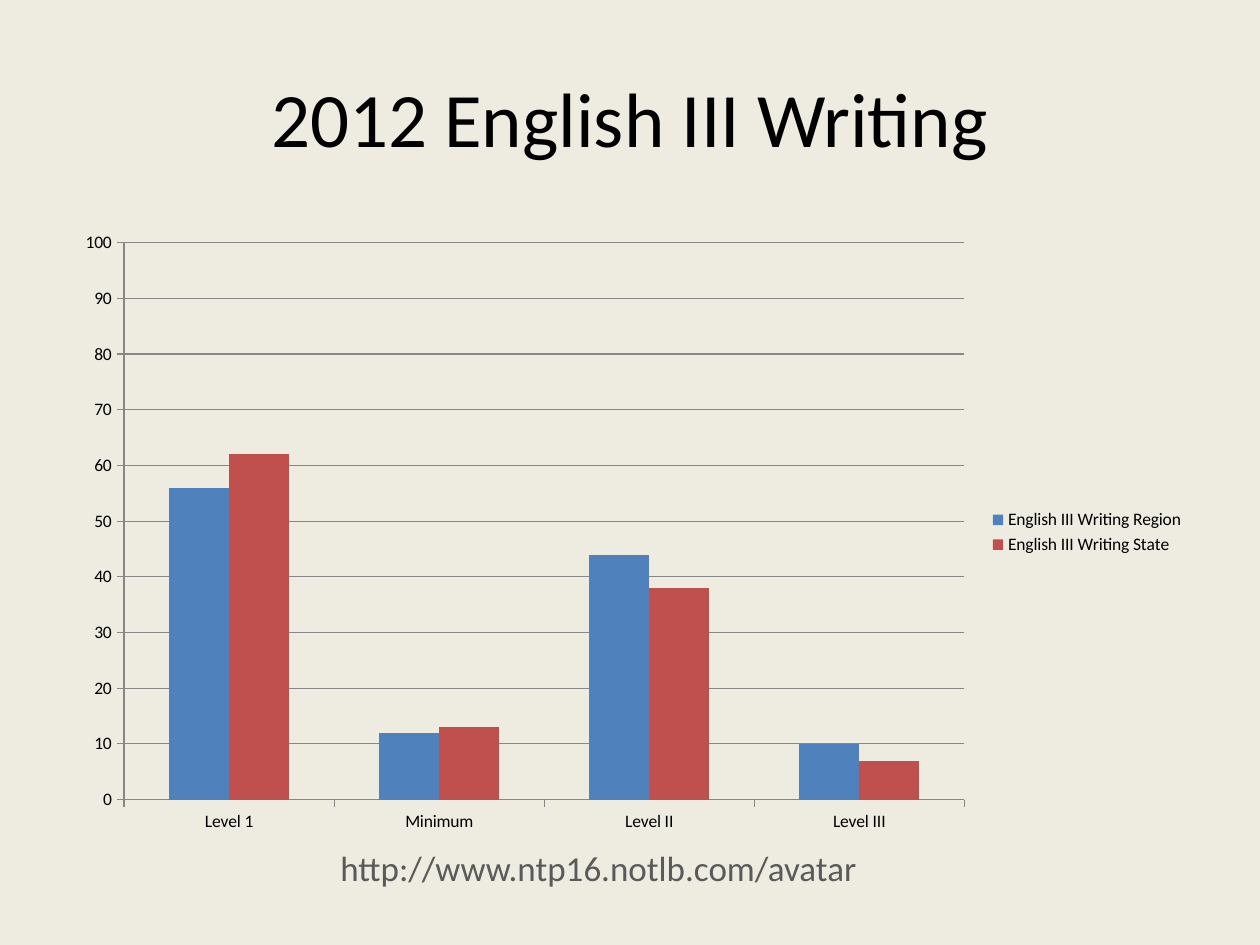
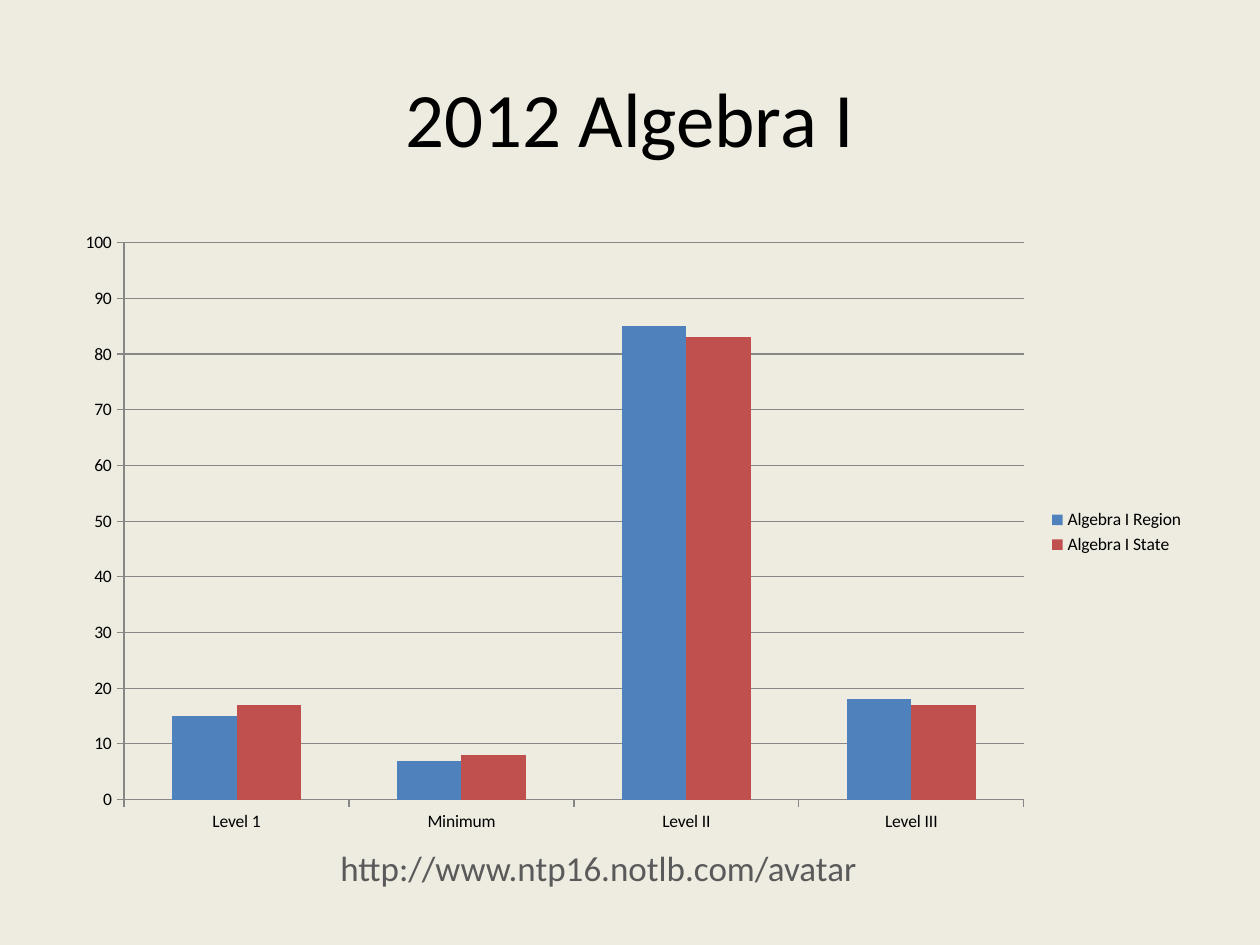
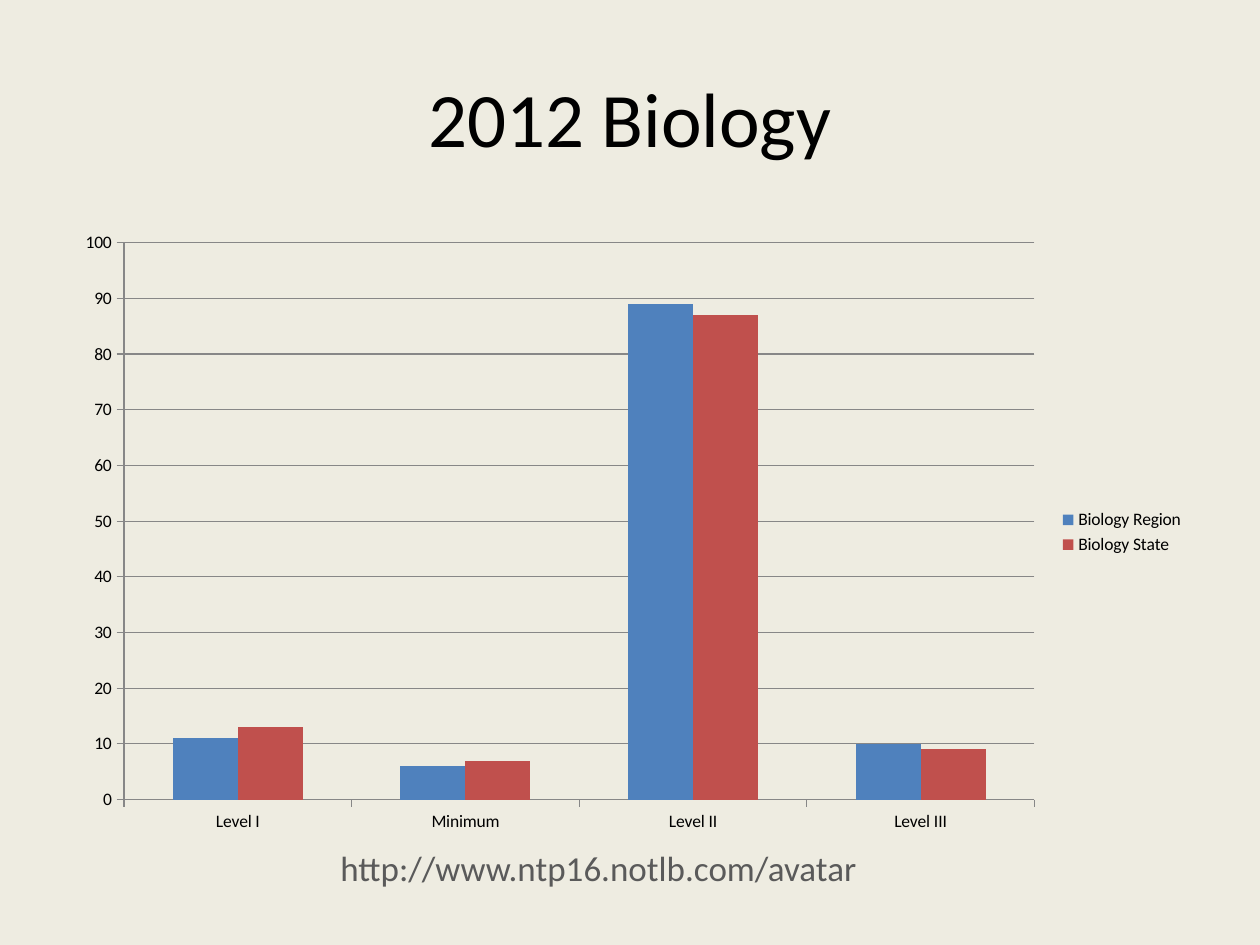
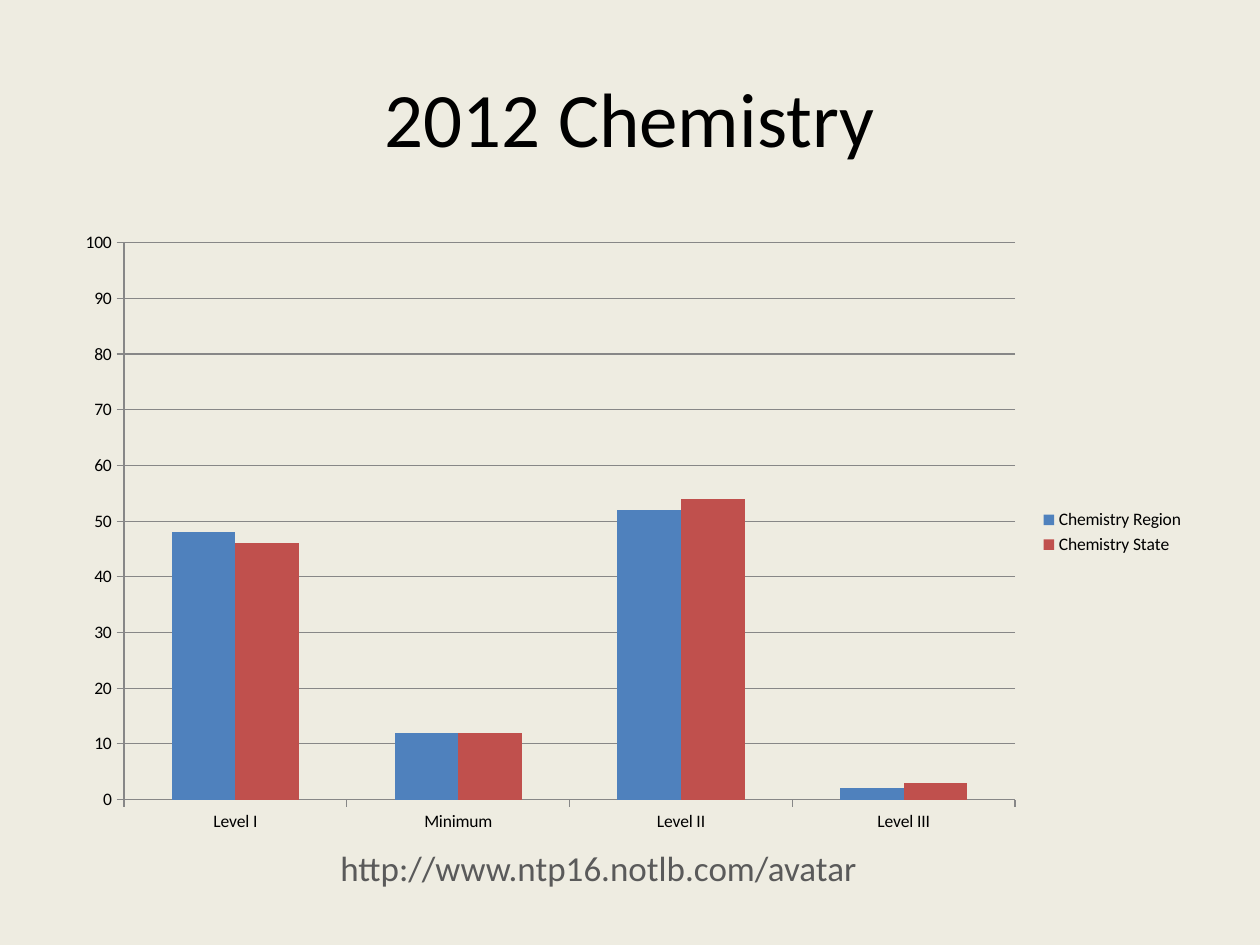
"""Build four column-chart slides of 2012 exam results, region against state."""
import pptx
import pptx.chart.data
import pptx.dml.color
import pptx.enum.chart
import pptx.enum.text
import pptx.util

Inches = pptx.util.Inches
FONT = "Calibri"
COLORS = {
    "background": "EEECE1",
    "text": "000000",
    "footer": "5A5A5A",
    "axis": "878787",
    "Region": "4F81BD",
    "State": "C0504D",
}
FOOTER = "http://www.ntp16.notlb.com/avatar"
LATER_LEVELS = ["Minimum", "Level II", "Level III"]
RESULTS = [
    ("English III Writing", "Level 1", [56, 12, 44, 10], [62, 13, 38, 7]),
    ("Algebra I", "Level 1", [15, 7, 85, 18], [17, 8, 83, 17]),
    ("Biology", "Level I", [11, 6, 89, 10], [13, 7, 87, 9]),
    ("Chemistry", "Level I", [48, 12, 52, 2], [46, 12, 54, 3]),
]


def rgb(name):
    return pptx.dml.color.RGBColor.from_string(COLORS[name])


def style_font(font, size, color):
    font.name = FONT
    font.size = pptx.util.Pt(size)
    font.color.rgb = rgb(color)


def write_line(frame, text, size, color):
    frame.word_wrap = True
    para = frame.paragraphs[0]
    para.alignment = pptx.enum.text.PP_ALIGN.CENTER
    span = para.add_run()
    span.text = text
    style_font(span.font, size, color)


def prepare_master(deck, layout):
    fill = deck.slide_master.background.fill
    fill.solid()
    fill.fore_color.rgb = rgb("background")
    for holder in list(layout.placeholders):
        if holder.placeholder_format.idx != 0:
            layout.shapes.element.remove(holder.element)


def move_footer_to_layout(slide, layout):
    box = slide.shapes.add_textbox(Inches(1.96), Inches(6.67), Inches(5.58), Inches(0.44))
    write_line(box.text_frame, FOOTER, 20, "footer")
    layout.shapes.element.append(box.element)


def add_title(slide, text):
    title = slide.shapes.title
    title.left, title.top = Inches(0.5), Inches(0.3)
    title.width, title.height = Inches(9), Inches(1.25)
    title.text_frame.vertical_anchor = pptx.enum.text.MSO_ANCHOR.MIDDLE
    write_line(title.text_frame, text, 44, "text")


def style_line(line):
    line.color.rgb = rgb("axis")
    line.width = pptx.util.Pt(0.75)


def style_axes(chart):
    for axis in (chart.category_axis, chart.value_axis):
        axis.major_tick_mark = pptx.enum.chart.XL_TICK_MARK.OUTSIDE
        axis.minor_tick_mark = pptx.enum.chart.XL_TICK_MARK.NONE
        style_line(axis.format.line)
    scale = chart.value_axis
    scale.minimum_scale, scale.maximum_scale, scale.major_unit = 0, 100, 10
    scale.has_major_gridlines = True
    style_line(scale.major_gridlines.format.line)


def add_results_chart(slide, subject, levels, scores):
    data = pptx.chart.data.CategoryChartData(number_format="General")
    data.categories = levels
    for group, values in scores.items():
        data.add_series(f"{subject} {group}", values)
    chart = slide.shapes.add_chart(
        pptx.enum.chart.XL_CHART_TYPE.COLUMN_CLUSTERED,
        Inches(0.5), Inches(1.75), Inches(9), Inches(4.95), data,
    ).chart
    style_font(chart.font, 10, "text")
    chart.has_title = False
    chart.has_legend = True
    chart.legend.position = pptx.enum.chart.XL_LEGEND_POSITION.RIGHT
    chart.legend.include_in_layout = False
    style_axes(chart)
    plot = chart.plots[0]
    plot.gap_width = 150
    plot.vary_by_categories = False
    for series, group in zip(plot.series, scores):
        series.format.fill.solid()
        series.format.fill.fore_color.rgb = rgb(group)


def main():
    deck = pptx.Presentation()
    deck.slide_width, deck.slide_height = Inches(10), Inches(7.5)
    layout = deck.slide_layouts.get_by_name("Title Only")
    prepare_master(deck, layout)
    for subject, first_level, region, state in RESULTS:
        slide = deck.slides.add_slide(layout)
        add_title(slide, f"2012 {subject}")
        scores = {"Region": region, "State": state}
        add_results_chart(slide, subject, [first_level, *LATER_LEVELS], scores)
    move_footer_to_layout(deck.slides[0], layout)
    deck.save("out.pptx")


if __name__ == "__main__":
    main()
